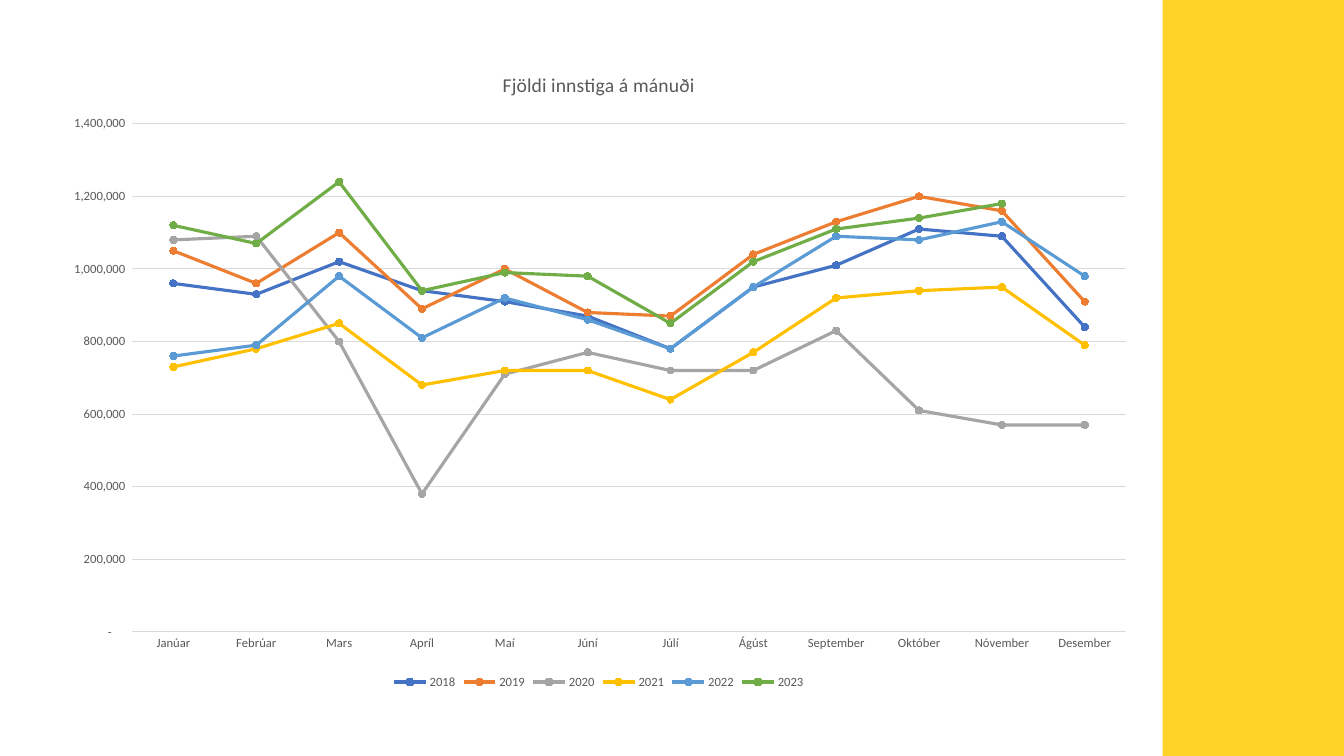
from pptx import Presentation
from pptx.chart.data import CategoryChartData
from pptx.dml.color import RGBColor
from pptx.enum.chart import XL_CHART_TYPE, XL_LEGEND_POSITION, XL_MARKER_STYLE, XL_TICK_MARK
from pptx.enum.shapes import MSO_SHAPE
from pptx.util import Pt

YELLOW = RGBColor(0xFF, 0xD2, 0x28)
BLACK = RGBColor(0, 0, 0)
GREY = RGBColor(0x59, 0x59, 0x59)
PALE = RGBColor(0xD9, 0xD9, 0xD9)
BLUE = RGBColor(0x44, 0x72, 0xC4)
ORANGE = RGBColor(0xED, 0x7D, 0x31)
SILVER = RGBColor(0xA5, 0xA5, 0xA5)
GOLD = RGBColor(0xFF, 0xC0, 0x00)
SKY = RGBColor(0x5B, 0x9B, 0xD5)
GREEN = RGBColor(0x70, 0xAD, 0x47)

WIDE, HIGH = 960, 540
BAND = 129.6
TITLE = "Fjöldi innstiga á mánuði"
FORMAT = '_(* #,##0_);_(* \\(#,##0\\);_(* "-"??_);_('
MONTHS = ["Janúar", "Febrúar", "Mars", "Apríl", "Maí", "Júní", "Júlí",
          "Ágúst", "September", "Október", "Nóvember", "Desember"]

# Boardings per month, in ten thousands
YEARS = {
    "2018": (BLUE, [96, 93, 102, 94, 91, 87, 78, 95, 101, 111, 109, 84]),
    "2019": (ORANGE, [105, 96, 110, 89, 100, 88, 87, 104, 113, 120, 116, 91]),
    "2020": (SILVER, [108, 109, 80, 38, 71, 77, 72, 72, 83, 61, 57, 57]),
    "2021": (GOLD, [73, 78, 85, 68, 72, 72, 64, 77, 92, 94, 95, 79]),
    "2022": (SKY, [76, 79, 98, 81, 92, 86, 78, 95, 109, 108, 113, 98]),
    "2023": (GREEN, [112, 107, 124, 94, 99, 98, 85, 102, 111, 114, 118, None]),
}


def style(item, values):
    for name, value in values.items():
        setattr(item, name, value)


def set_font(font, size, color=GREY):
    style(font, {"name": "Calibri", "size": Pt(size), "bold": False})
    font.color.rgb = color


def set_line(line, color, width):
    line.color.rgb = color
    line.width = Pt(width)


def add_band(slide, left, top, width, height):
    band = slide.shapes.add_shape(
        MSO_SHAPE.RECTANGLE, Pt(left), Pt(top), Pt(width), Pt(height))
    band.shadow.inherit = False
    band.fill.solid()
    band.fill.fore_color.rgb = YELLOW
    band.line.fill.background()


def add_graph(slide, left, top, width, height):
    data = CategoryChartData(number_format=FORMAT)
    data.categories = MONTHS
    for year, (_, counts) in YEARS.items():
        data.add_series(year, [n and n * 10000 for n in counts])
    chart = slide.shapes.add_chart(
        XL_CHART_TYPE.LINE_MARKERS, Pt(left), Pt(top), Pt(width), Pt(height), data).chart
    set_font(chart.font, 10, BLACK)

    # Title and legend
    chart.has_title = True
    chart.chart_title.include_in_layout = False
    frame = chart.chart_title.text_frame
    frame.text = TITLE
    set_font(frame.paragraphs[0].runs[0].font, 14)
    chart.has_legend = True
    style(chart.legend, {"position": XL_LEGEND_POSITION.BOTTOM, "include_in_layout": False})
    set_font(chart.legend.font, 9)

    # Axes and grid
    months, counts = chart.category_axis, chart.value_axis
    for axis in (months, counts):
        style(axis, {"major_tick_mark": XL_TICK_MARK.NONE,
                     "minor_tick_mark": XL_TICK_MARK.NONE})
        set_font(axis.tick_labels.font, 9)
    set_line(months.format.line, PALE, 0.75)
    counts.format.line.fill.background()
    style(counts, {"minimum_scale": 0, "maximum_scale": 1400000,
                   "major_unit": 200000, "has_major_gridlines": True})
    set_line(counts.major_gridlines.format.line, PALE, 0.75)
    style(counts.tick_labels, {"number_format": FORMAT, "number_format_is_linked": False})

    # One line per year
    plot = chart.plots[0]
    plot.vary_by_categories = False
    for line, (color, _) in zip(plot.series, YEARS.values()):
        line.smooth = False
        set_line(line.format.line, color, 2.25)
        mark = line.marker
        style(mark, {"style": XL_MARKER_STYLE.CIRCLE, "size": 5})
        mark.format.fill.solid()
        mark.format.fill.fore_color.rgb = color
        set_line(mark.format.line, color, 0.75)


def main():
    deck = Presentation()
    style(deck, {"slide_width": Pt(WIDE), "slide_height": Pt(HIGH)})
    slide = deck.slides.add_slide(deck.slide_layouts[6])
    add_band(slide, WIDE - BAND, 0, BAND, HIGH)
    add_graph(slide, 35.3, 35.3, 784.8, 460)
    deck.save("out.pptx")


if __name__ == "__main__":
    main()
